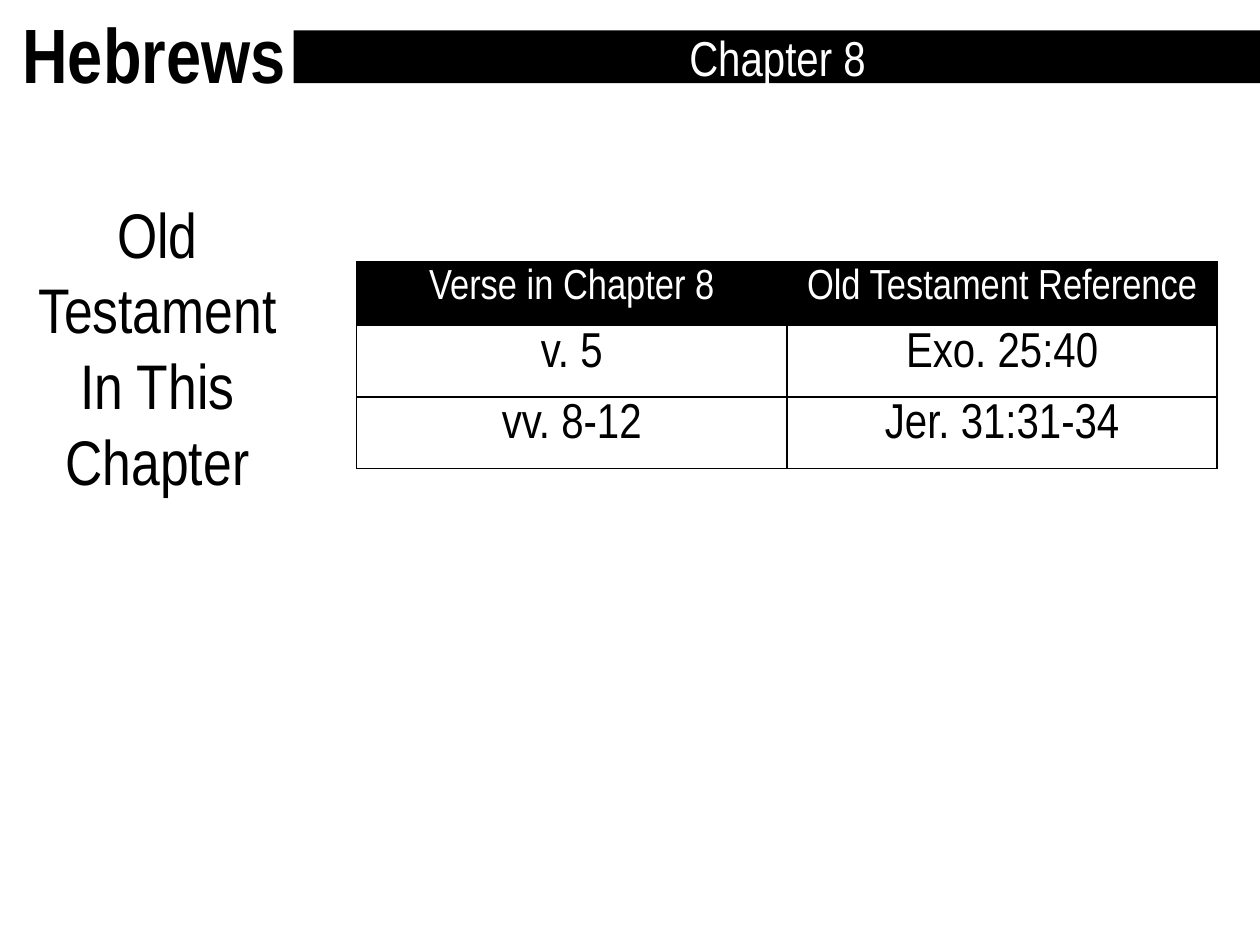
from lxml import etree
from pptx import Presentation
from pptx.dml.color import RGBColor
from pptx.enum import shapes, text
from pptx.oxml import ns
from pptx.util import Inches, Pt

HUES = {"ink": "000000", "paper": "FFFFFF"}
ROWS = [
    ("Verse in Chapter 8", "Old Testament Reference"),
    ("v. 5", "Exo. 25:40"),
    ("vv. 8-12", "Jer. 31:31-34"),
]


class Page:
    """Holds the style and the current slide."""

    def __init__(self, slide, face="Arial Narrow"):
        self.slide = slide
        self.face = face

    def hue(self, name):
        return RGBColor.from_string(HUES[name])

    def letter(self, frame, words, size, ink="ink", bold=False, center=True):
        frame.text = words
        for para in frame.paragraphs:
            para.alignment = text.PP_ALIGN.CENTER if center else text.PP_ALIGN.LEFT
            for run in para.runs:
                font = run.font
                font.name, font.size, font.bold = self.face, Pt(size), bold
                font.color.rgb = self.hue(ink)

    def label(self, box, words, size, **style):
        frame = self.slide.shapes.add_textbox(*map(Inches, box)).text_frame
        frame.word_wrap = True
        self.letter(frame, words, size, **style)

    def bar(self, box, words, size):
        bar = self.slide.shapes.add_shape(
            shapes.MSO_SHAPE.RECTANGLE, *map(Inches, box))
        bar.shadow.inherit = False
        bar.fill.solid()
        bar.fill.fore_color.rgb = self.hue("ink")
        bar.line.fill.background()
        bar.text_frame.vertical_anchor = text.MSO_ANCHOR.MIDDLE
        self.letter(bar.text_frame, words, size, "paper")

    def edge(self, cell):
        props = cell._tc.get_or_add_tcPr()
        for i, side in enumerate(("lnL", "lnR", "lnT", "lnB")):
            line = etree.Element(ns.qn("a:" + side), w=str(Pt(1)))
            fill = etree.SubElement(line, ns.qn("a:solidFill"))
            etree.SubElement(fill, ns.qn("a:srgbClr"), val=HUES["ink"])
            props.insert(i, line)

    def table(self, box, rows, highs):
        grid = self.slide.shapes.add_table(
            len(rows), len(rows[0]), *map(Inches, box)).table
        for r, (row, high) in enumerate(zip(rows, highs)):
            grid.rows[r].height = Inches(high)
            head = r == 0
            for c, words in enumerate(row):
                cell = grid.cell(r, c)
                cell.fill.solid()
                cell.fill.fore_color.rgb = self.hue("ink" if head else "paper")
                self.letter(cell.text_frame, words, 24 if head else 28,
                            "paper" if head else "ink")
                self.edge(cell)


def main():
    deck = Presentation()
    deck.slide_width, deck.slide_height = Inches(10), Inches(7.5)
    page = Page(deck.slides.add_slide(deck.slide_layouts[6]))
    page.label((0, 1.5, 2.5, 2.52), "Old\nTestament\nIn This\nChapter", 36)
    page.table((2.83, 2.08, 6.83, 1.63), ROWS, (0.49, 0.57, 0.57))
    page.label((0.08, 0, 9.93, 0.84), "Hebrews", 44, bold=True, center=False)
    page.bar((2.33, 0.24, 7.68, 0.42), "Chapter 8", 28)
    deck.save("out.pptx")


if __name__ == "__main__":
    main()
